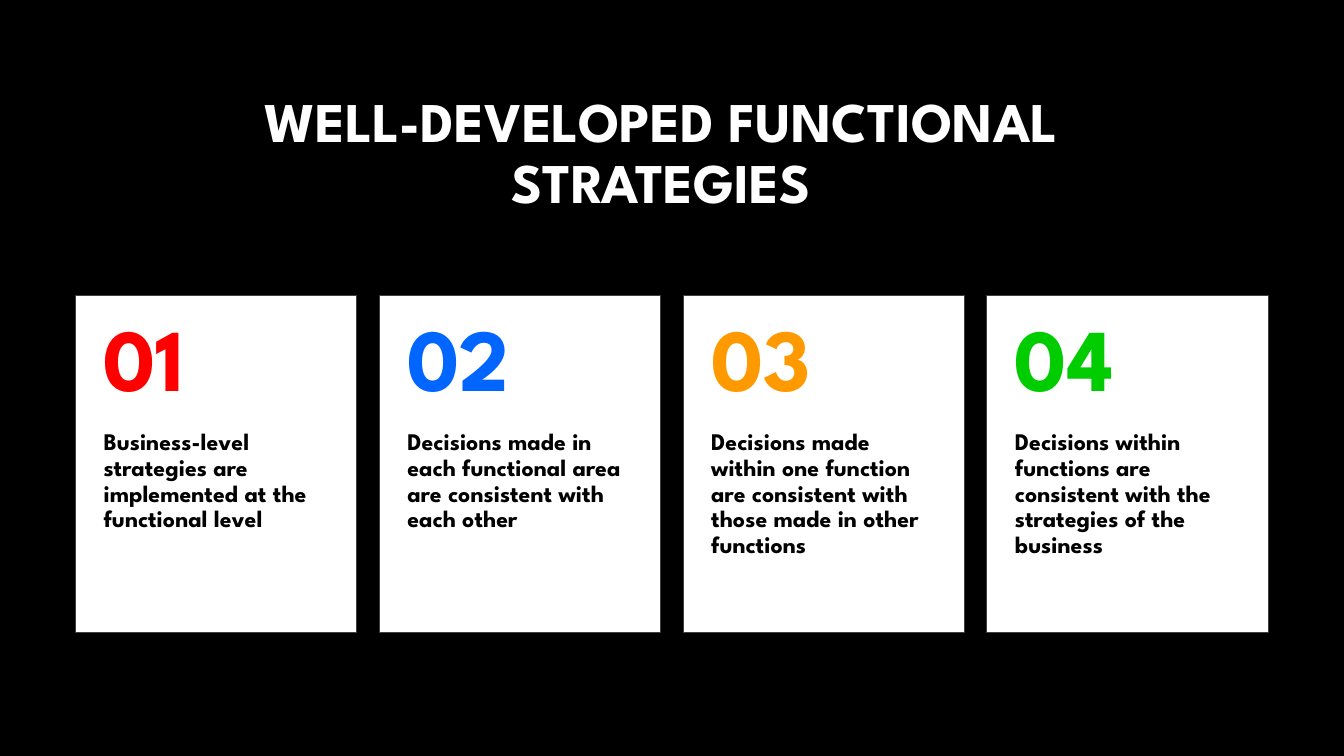
from pptx import Presentation
from pptx.dml.color import RGBColor
from pptx.enum.shapes import MSO_SHAPE
from pptx.enum.text import MSO_ANCHOR, PP_ALIGN
from pptx.util import Pt

RECTANGLE = MSO_SHAPE.RECTANGLE
TOP, MIDDLE = MSO_ANCHOR.TOP, MSO_ANCHOR.MIDDLE
LEFT, CENTER = PP_ALIGN.LEFT, PP_ALIGN.CENTER

# Content
TITLE = "WELL-DEVELOPED FUNCTIONAL STRATEGIES"
STRATEGIES = [
    ("01", "FF0000", "Business-level strategies are implemented at the functional level"),
    ("02", "0066FF", "Decisions made in each functional area are consistent with each other"),
    ("03", "FF9900", "Decisions made within one function are consistent with "
                     "those made in other functions"),
    ("04", "00CC00", "Decisions within functions are consistent with the "
                     "strategies of the business"),
]

THEME = {
    "font": "League Spartan",
    "background": "000000", "title": "FFFFFF", "body": "000000",
    "card": "FFFFFF", "border": "3F3F3F",
    "title_size": 40, "number_size": 63, "body_size": 17,
}

# Layout in points
SLIDE_W, SLIDE_H = 960, 540
TITLE_BOX = (133.2, 59.8, 678.2, 101.5)
CARD_LEFT, CARD_TOP, CARD_W, CARD_H = 54, 210.8, 200.8, 241
CARD_GAP = 16.2
NUMBER_H = 0.4 * CARD_H


def add_text(slide, text, box, size, color, anchor=TOP, align=LEFT,
             insets=(7.2, 3.6, 7.2, 3.6)):
    frame = slide.shapes.add_textbox(*map(Pt, box)).text_frame
    frame.word_wrap = True
    frame.vertical_anchor = anchor
    (frame.margin_left, frame.margin_top,
     frame.margin_right, frame.margin_bottom) = map(Pt, insets)
    frame.text = text
    paragraph = frame.paragraphs[0]
    paragraph.alignment = align
    paragraph.line_spacing = 0.9
    font = paragraph.runs[0].font
    font.name, font.size, font.bold = THEME["font"], Pt(size), True
    font.color.rgb = RGBColor.from_string(color)


def add_card(slide, left, number, accent, statement):
    card = slide.shapes.add_shape(
        RECTANGLE, Pt(left), Pt(CARD_TOP), Pt(CARD_W), Pt(CARD_H))
    card.shadow.inherit = False
    card.fill.solid()
    card.fill.fore_color.rgb = RGBColor.from_string(THEME["card"])
    card.line.color.rgb = RGBColor.from_string(THEME["border"])
    card.line.width = Pt(0.75)

    add_text(slide, statement,
             (left, CARD_TOP + NUMBER_H, CARD_W, CARD_H - NUMBER_H),
             THEME["body_size"], THEME["body"], insets=(20, 0, 20, 26))
    add_text(slide, number, (left, CARD_TOP, CARD_W, NUMBER_H),
             THEME["number_size"], accent, MIDDLE, insets=(20, 13, 20, 13))


def main():
    deck = Presentation()
    deck.slide_width, deck.slide_height = Pt(SLIDE_W), Pt(SLIDE_H)
    slide = deck.slides.add_slide(deck.slide_layouts[6])
    slide.background.fill.solid()
    slide.background.fill.fore_color.rgb = RGBColor.from_string(THEME["background"])

    # Title
    add_text(slide, TITLE, TITLE_BOX, THEME["title_size"], THEME["title"],
             MIDDLE, CENTER)

    # Row of numbered cards
    for index, strategy in enumerate(STRATEGIES):
        add_card(slide, CARD_LEFT + index * (CARD_W + CARD_GAP), *strategy)

    deck.save("out.pptx")


if __name__ == "__main__":
    main()
